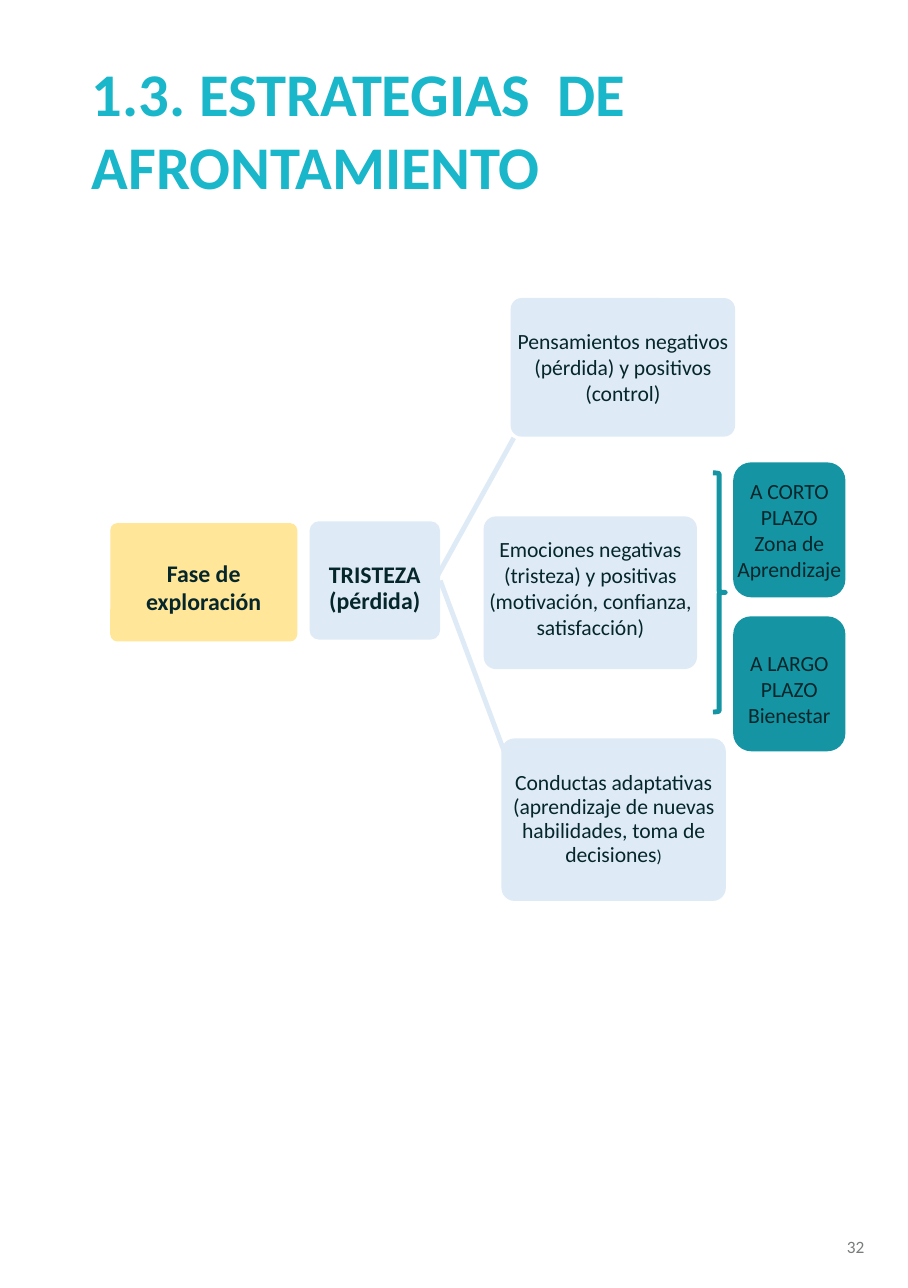
from lxml import etree
from pptx import Presentation
from pptx.dml.color import RGBColor
from pptx.enum.shapes import MSO_CONNECTOR, MSO_SHAPE
from pptx.enum.text import MSO_ANCHOR, PP_ALIGN
from pptx.oxml.ns import qn
from pptx.util import Cm, Pt

ROUNDED, BRACE = MSO_SHAPE.ROUNDED_RECTANGLE, MSO_SHAPE.RIGHT_BRACE
STRAIGHT = MSO_CONNECTOR.STRAIGHT
MIDDLE = MSO_ANCHOR.MIDDLE
LEFT, CENTER, RIGHT = PP_ALIGN.LEFT, PP_ALIGN.CENTER, PP_ALIGN.RIGHT

CYAN = RGBColor(0x1A, 0xB6, 0xC9)
TEAL = RGBColor(0x15, 0x95, 0xA4)
PALE_BLUE = RGBColor(0xDE, 0xEB, 0xF7)
YELLOW = RGBColor(0xFF, 0xE6, 0x99)
INK = RGBColor(0x05, 0x26, 0x2A)
GREY = RGBColor(0x79, 0x7C, 0x7D)

FONT = "Calibri"
RIGHT_SIDE = 3


class Page:
    def __init__(self, s):
        self.shapes = s.shapes

    def run(self, p, text, size, color=INK, bold=False):
        r = p.add_run()
        r.text = text
        r.font.name = FONT
        r.font.size = Pt(size)
        r.font.bold = bold
        r.font.color.rgb = color

    def paragraph(self, p, text, align, *style):
        """Fill p with one run per line of text."""
        p.alignment = align
        for i, line in enumerate(text.split("\n")):
            if i:
                p.add_line_break()
            self.run(p, line, *style)

    def text(self, text, x, y, w, h, align, inset, *style):
        tf = self.shapes.add_textbox(Cm(x), Cm(y), Cm(w), Cm(h)).text_frame
        tf.word_wrap = True
        tf.vertical_anchor = MIDDLE
        tf.margin_left = tf.margin_right = Cm(inset)
        tf.margin_top = tf.margin_bottom = 0
        self.paragraph(tf.paragraphs[0], text, align, *style)

    def box(self, texts, x, y, w, h, fill, size=10, bold=False,
            corner=0.08, spacing=1.0, top=0, bottom=0):
        """Rounded box with one centred paragraph for each text."""
        sp = self.shapes.add_shape(ROUNDED, Cm(x), Cm(y), Cm(w), Cm(h))
        sp.shadow.inherit = False
        sp.adjustments[0] = corner
        sp.fill.solid()
        sp.fill.fore_color.rgb = fill
        sp.line.fill.background()
        tf = sp.text_frame
        tf.word_wrap = False
        tf.vertical_anchor = MIDDLE
        tf.margin_left = tf.margin_right = 0
        tf.margin_top, tf.margin_bottom = Cm(top), Cm(bottom)
        for i, text in enumerate(texts):
            p = tf.add_paragraph() if i else tf.paragraphs[0]
            p.line_spacing = spacing
            self.paragraph(p, text, CENTER, size, INK, bold)
        return sp

    def branch(self, x1, y1, x2, y2):
        line = self.shapes.add_connector(STRAIGHT, Cm(x1), Cm(y1), Cm(x2), Cm(y2))
        line.line.color.rgb = PALE_BLUE
        line.line.width = Pt(2.25)
        etree.SubElement(line._element.spPr, qn("a:effectLst"))
        return line

    def brace(self, x, y, w, h):
        sp = self.shapes.add_shape(BRACE, Cm(x), Cm(y), Cm(w), Cm(h))
        sp.shadow.inherit = False
        sp.fill.background()
        sp.line.color.rgb = TEAL
        sp.line.width = Pt(2.25)


def main():
    prs = Presentation()
    prs.slide_width, prs.slide_height = Cm(14.81), Cm(21)
    page = Page(prs.slides.add_slide(prs.slide_layouts[6]))

    page.text("1.3. ESTRATEGIAS  DE AFRONTAMIENTO", 1.5, 0.9, 13, 2.4,
              LEFT, 0, 28, CYAN, True)

    page.box(["Fase de\nexploración"], 1.8, 8.53, 3.05, 1.93, YELLOW,
             size=11, bold=True, corner=0.06, top=0.15)
    sadness = page.box(["TRISTEZA", "(pérdida)"], 5.05, 8.5, 2.13, 1.93, PALE_BLUE,
                       size=11, bold=True, spacing=Pt(12.1), top=0.26)

    page.branch(7.09, 9.47, 8.38, 7.14)
    page.branch(7.18, 9.47, 8.23, 12.27).begin_connect(sadness, RIGHT_SIDE)

    page.box(["Pensamientos negativos\n(pérdida) y positivos", "(control)"],
             8.33, 4.86, 3.66, 2.26, PALE_BLUE)
    page.box(["Emociones negativas\n(tristeza) y positivas\n"
              "(motivación, confianza,\nsatisfacción)"],
             7.89, 8.42, 3.48, 2.49, PALE_BLUE, bottom=0.15)
    behaviours = page.box(["Conductas adaptativas\n(aprendizaje de nuevas\n"
                           "habilidades, toma de\ndecisiones"],
                          8.18, 12.04, 3.66, 2.65, PALE_BLUE, spacing=0.92)
    page.run(behaviours.text_frame.paragraphs[0], ")", 8)

    page.brace(11.63, 7.71, 0.2, 3.9)
    terms = [(["A CORTO\nPLAZO", "Zona de\nAprendizaje"], 0),
             (["A LARGO", "PLAZO", "Bienestar"], 0.16)]
    for i, (texts, top) in enumerate(terms):
        page.box(texts, 11.96, 7.54 + 2.51 * i, 1.83, 2.2, TEAL,
                 corner=0.16, top=top)

    page.text("32", 11.02, 19.76, 3.33, 1.12, RIGHT, 0.25, 8, GREY)
    prs.save("out.pptx")


if __name__ == "__main__":
    main()
